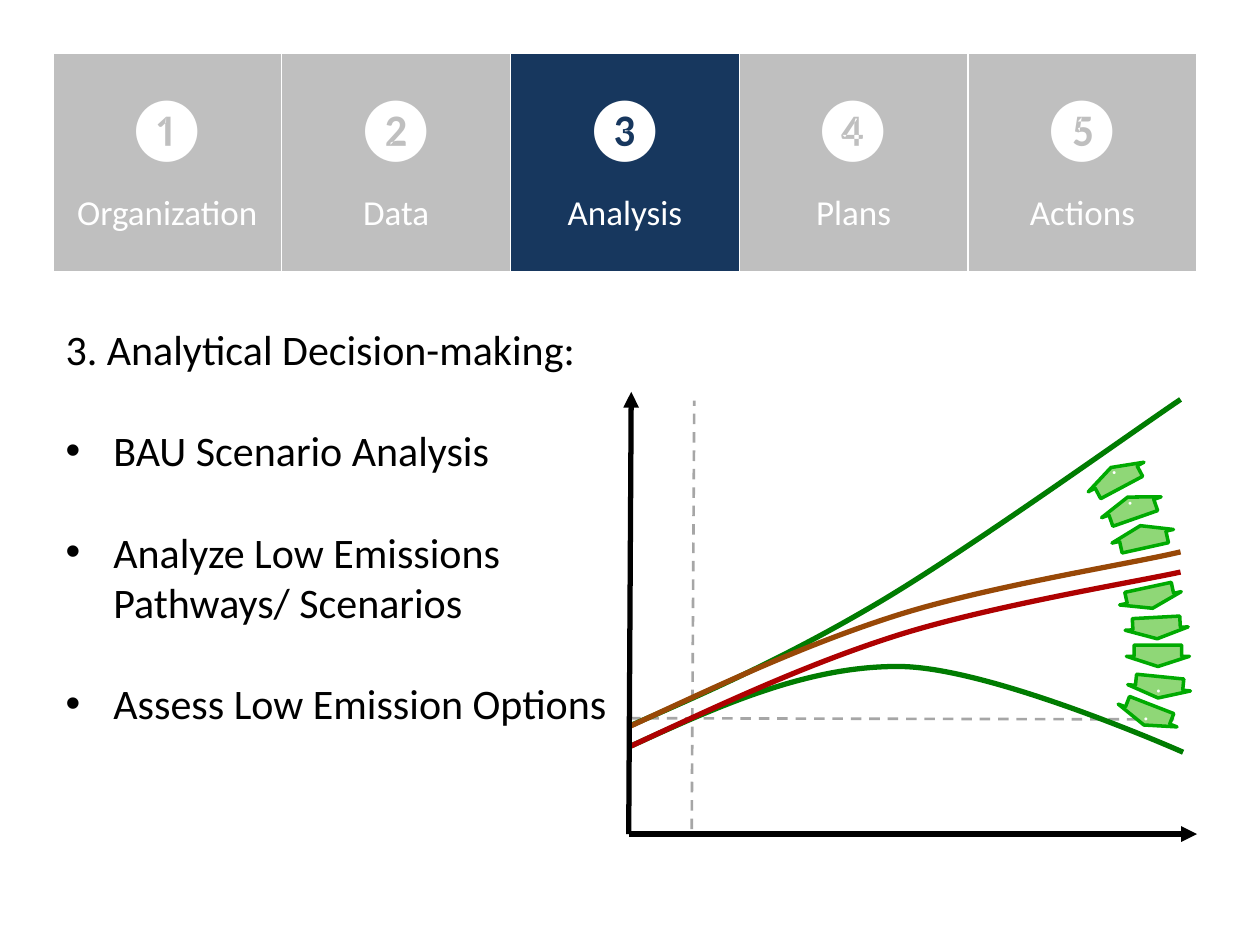
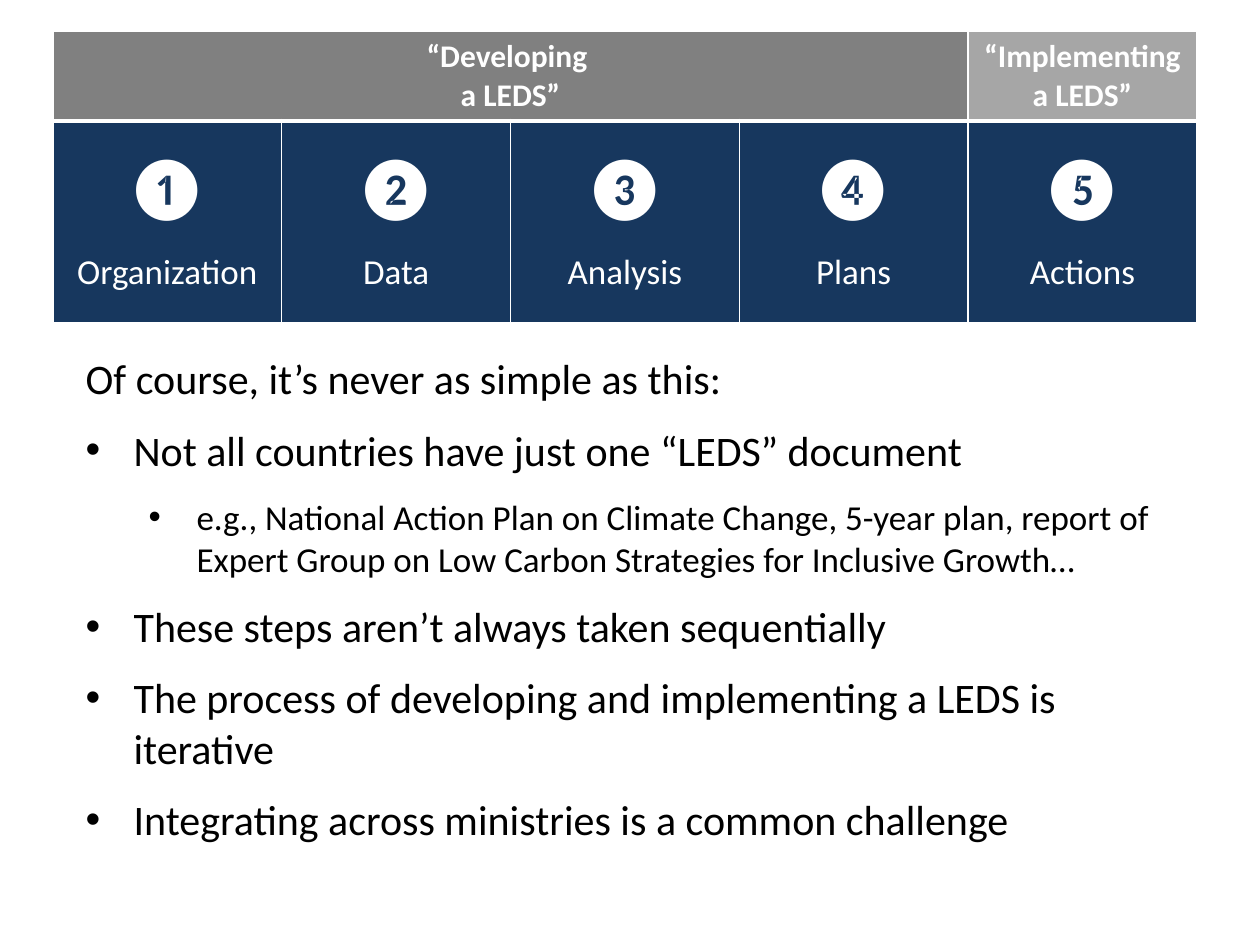
from pptx import Presentation
from pptx.dml.color import RGBColor
from pptx.enum.dml import MSO_LINE_DASH_STYLE as Dash
from pptx.enum.shapes import MSO_CONNECTOR as Conn, MSO_SHAPE as Shape
from pptx.enum.text import MSO_ANCHOR as Anchor, MSO_AUTO_SIZE as Auto, PP_ALIGN as Align
from pptx.oxml.ns import qn
from pptx.util import Inches, Pt
from lxml.etree import SubElement

FONT = "Calibri"
WHITE, BLACK, NAVY = "FFFFFF", "000000", "17375E"
PALE, GREY, DARK = "BFBFBF", "A6A6A6", "808080"
GREEN, BROWN, RED = "007C01", "984807", "AE0101"
LEAF, EDGE = "8FD777", "00AA01"
STEPS = [("❶", "Organization"), ("❷", "Data"), ("❸", "Analysis"), ("❹", "Plans"), ("❺", "Actions")]


def rgb(code):
    return RGBColor.from_string(code)


def style(par, size, color, bold=False):
    par.font.name = FONT
    par.font.size = Pt(size)
    par.font.bold = bold
    par.font.color.rgb = rgb(color)


prs = Presentation()
prs.slide_width, prs.slide_height = Inches(10), Inches(7.5)

pages = [
    {"top": 0.42, "rows": [1.75], "fills": [PALE, PALE, NAVY, PALE, PALE],
     "box": (0.42, 2.52, 4.92, 3.87), "gap": 29,
     "list": [(None, "3. Analytical Decision-making:"),
              (0, "BAU Scenario Analysis"),
              (0, "Analyze Low Emissions Pathways/ Scenarios"),
              (0, "Assess Low Emission Options")]},
    {"top": 0.25, "rows": [0.7, 1.6], "fills": [NAVY] * 5,
     "box": (0.58, 2.75, 9, 4.04), "gap": 12,
     "list": [(None, "Of course, it’s never as simple as this:"),
              (0, "Not all countries have just one “LEDS” document"),
              (1, "e.g., National Action Plan on Climate Change, 5-year plan, report of "
                  "Expert Group on Low Carbon Strategies for Inclusive Growth…"),
              (0, "These steps aren’t always taken sequentially"),
              (0, "The process of developing and implementing a LEDS is iterative"),
              (0, "Integrating across ministries is a common challenge")]},
]

for page in pages:
    slide = prs.slides.add_slide(prs.slide_layouts[1])
    title = slide.shapes.title.element
    title.getparent().remove(title)

    rows = page["rows"]
    table = slide.shapes.add_table(len(rows), len(STEPS), Inches(0.42), Inches(page["top"]),
                                   Inches(9.08), Inches(sum(rows))).table
    for row, high in zip(table.rows, rows):
        row.height = Inches(high)
    for cell in table.rows[0].cells:
        edge = SubElement(cell._tc.get_or_add_tcPr(), qn("a:lnB"), w=str(Pt(3)))
        SubElement(SubElement(edge, qn("a:solidFill")), qn("a:srgbClr"), val=WHITE)
    if len(rows) == 2:
        table.cell(0, 0).merge(table.cell(0, 3))
        for col, text, fill in [(0, "“Developing \na LEDS”", DARK), (4, "“Implementing a LEDS”", GREY)]:
            cell = table.cell(0, col)
            cell.text = text
            cell.vertical_anchor = Anchor.MIDDLE
            cell.fill.solid()
            cell.fill.fore_color.rgb = rgb(fill)
            for par in cell.text_frame.paragraphs:
                par.alignment = Align.CENTER
                style(par, 18, WHITE, True)
    for col, (step, fill) in enumerate(zip(STEPS, page["fills"])):
        cell = table.cell(len(rows) - 1, col)
        cell.text = "\n".join(step)
        cell.vertical_anchor = Anchor.MIDDLE
        cell.fill.solid()
        cell.fill.fore_color.rgb = rgb(fill)
        for par, size, gap in zip(cell.text_frame.paragraphs, (36, 20), (13.4, 0)):
            par.alignment = Align.CENTER
            par.space_after = Pt(gap)
            style(par, size, WHITE)

    body = slide.placeholders[1]
    body.left, body.top, body.width, body.height = [Inches(v) for v in page["box"]]
    frame = body.text_frame
    frame.auto_size = Auto.NONE
    frame.vertical_anchor = Anchor.TOP
    frame.text = "\n".join(text for _, text in page["list"])
    for par, (level, _) in zip(frame.paragraphs, page["list"]):
        par.level = level or 0
        par.space_before, par.space_after = Pt(0), Pt(page["gap"])
        props = par._p.get_or_add_pPr()
        if level is None:
            props.set("marL", "0")
            props.set("indent", "0")
            SubElement(props, qn("a:buNone"))
        else:
            props.set("marL", str(Inches(0.38 + 0.5 * level)))
            props.set("indent", str(Inches(-0.38)))
            SubElement(props, qn("a:buFont")).set("typeface", "Arial")
            SubElement(props, qn("a:buChar")).set("char", "•")
        style(par, 20 if level else 24, BLACK)

graph = prs.slides[0].shapes.add_group_shape()
shapes = graph.shapes

lines = [
    (5, 5.7, 9.35, 5.71, False),
    (4.99, 6.62, 9.5, 6.62, True),
    (5.49, 6.58, 5.51, 3.18, False),
    (4.99, 6.62, 5.01, 3.11, True),
]
curves = [
    (GREEN, [(5.01, 5.92), (5.71, 5.6), (6.42, 5.28), (7.15, 5.29), (7.88, 5.3), (9.39, 5.97), (9.39, 5.97)]),
    (GREEN, [(5, 5.76), (5.62, 5.49), (6.23, 5.22), (6.96, 4.79), (7.69, 4.36), (8.97, 3.44), (9.37, 3.17)]),
    (BROWN, [(5.01, 5.76), (5.7, 5.44), (6.4, 5.11), (7.13, 4.88), (7.86, 4.65), (9, 4.47), (9.37, 4.38)]),
    (RED, [(5.01, 5.92), (5.7, 5.6), (6.4, 5.27), (7.13, 5.04), (7.86, 4.81), (9, 4.62), (9.37, 4.54)]),
]
arrows = [
    (8.88, 4.66, 0.17, 347.8, ""), (8.93, 4.9, 0.17, 356.9, ""), (8.94, 5.12, 0.17, 0, ""),
    (8.95, 5.37, 0.17, 5.8, "."), (8.86, 5.59, 0.17, 21.2, "."),
    (8.82, 4.17, 0.18, 167.5, ""), (8.73, 3.94, 0.18, 160.7, "."), (8.61, 3.7, 0.18, 152, "."),
]

for x1, y1, x2, y2, axis in lines:
    line = shapes.add_connector(Conn.STRAIGHT, Inches(x1), Inches(y1), Inches(x2), Inches(y2))
    line.line.color.rgb = rgb(BLACK if axis else GREY)
    line.line.width = Pt(3 if axis else 1.5)
    if axis:
        SubElement(line.line._get_or_add_ln(), qn("a:tailEnd")).set("type", "triangle")
    else:
        line.line.dash_style = Dash.DASH
    SubElement(line._element.spPr, qn("a:effectLst"))

for color, knots in curves:
    dots = [(Inches(x), Inches(y)) for x, y in knots]
    form = shapes.build_freeform(*dots[0])
    form.add_line_segments(dots[1:], close=False)
    curve = form.convert_to_shape()
    legs = curve._element.findall(".//" + qn("a:lnTo"))
    route = legs[0].getparent()
    for start in (0, 3):
        bend = SubElement(route, qn("a:cubicBezTo"))
        for leg in legs[start:start + 3]:
            bend.append(leg[0])
            route.remove(leg)
    curve.shadow.inherit = False
    curve.fill.background()
    curve.line.color.rgb = rgb(color)
    curve.line.width = Pt(3)

for left, top, high, turn, text in arrows:
    arrow = shapes.add_shape(Shape.DOWN_ARROW, Inches(left), Inches(top), Inches(0.5), Inches(high))
    arrow.adjustments[0], arrow.adjustments[1] = 0.753, 0.476
    arrow.rotation = turn
    arrow.shadow.inherit = False
    arrow.fill.solid()
    arrow.fill.fore_color.rgb = rgb(LEAF)
    arrow.line.color.rgb = rgb(EDGE)
    arrow.line.width = Pt(2)
    if text:
        arrow.text_frame.text = text
        arrow.text_frame.vertical_anchor = Anchor.MIDDLE
        par = arrow.text_frame.paragraphs[0]
        par.alignment = Align.CENTER
        style(par, 14, WHITE)

graph._element.append(line._element)
prs.save("out.pptx")
